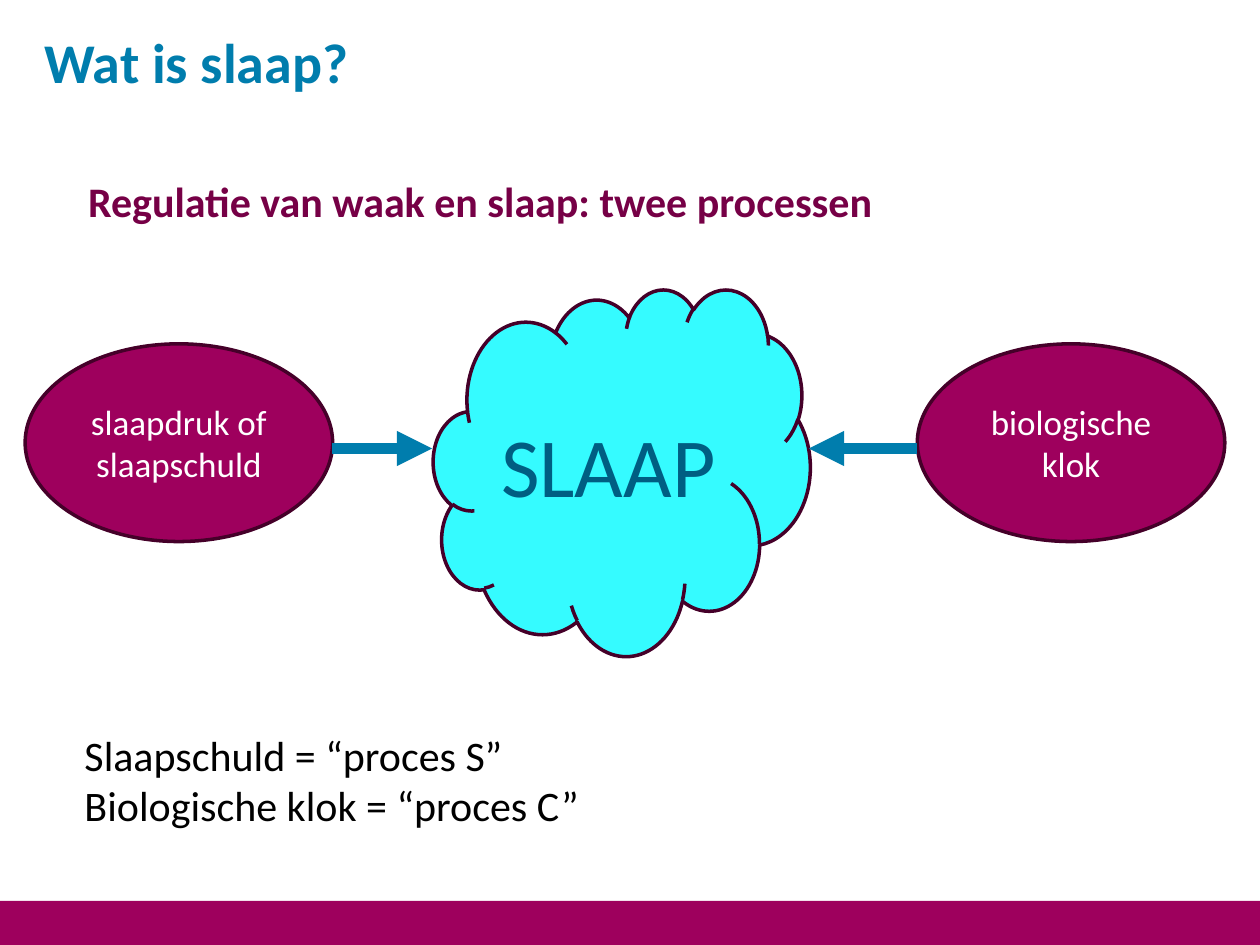
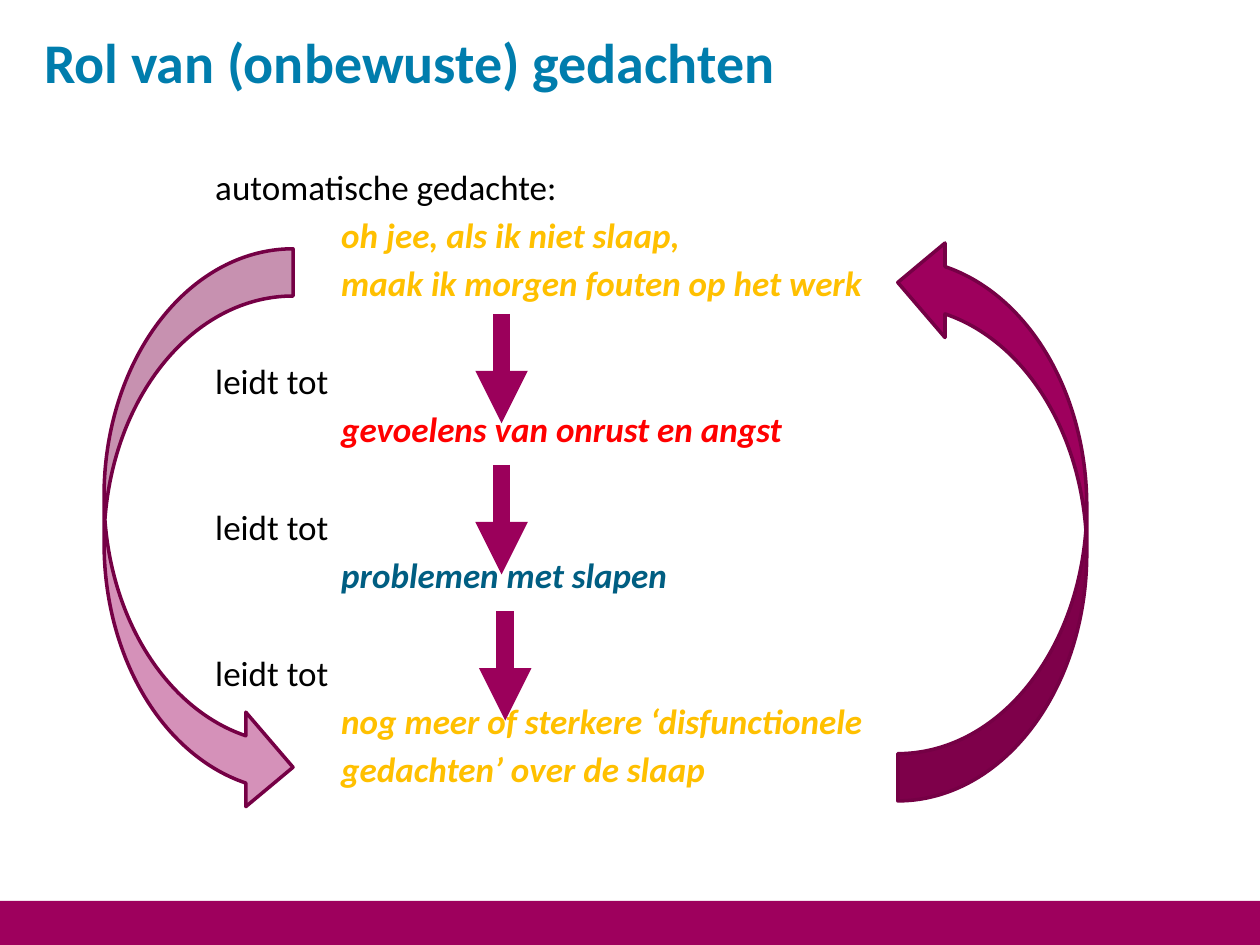
from dataclasses import dataclass

from lxml import etree
from pptx import Presentation
from pptx import util as u
from pptx.dml.color import RGBColor
from pptx.enum import shapes, text
from pptx.oxml.ns import qn

FONT = "Calibri"
BLUE, DARK_BLUE, CYAN = "007DAD", "005E82", "35FBFF"
MAGENTA, ARROW_MAGENTA = "9E005D", "9B005B"
PLUM, DARK_PLUM, EDGE = "760046", "450029", "750045"
BLACK, WHITE, YELLOW, RED = "000000", "FFFFFF", "FFC000", "FF0000"

WIDTH, HEIGHT, BAND = 720, 540, 25.2
LINE_GAP = 3.65    # space between lines of the chain of thoughts
STEP_GAP = 31.7    # the same, with one line left open
TAB = 72

Box = tuple[float, float, float, float]
Point = tuple[float, float]


@dataclass
class Style:
    size: float
    color: str
    bold: bool = False
    italic: bool = False


@dataclass
class Outline:
    color: str
    width: float = 2


@dataclass
class Bubble:
    kind: shapes.MSO_SHAPE
    box: Box
    fill: str
    label: str
    style: Style


@dataclass
class Arrow:
    start: Point
    end: Point
    color: str
    width: float


@dataclass
class Loop:
    box: Box
    rotation: float
    alpha: int = 100


@dataclass
class Thought:
    label: str
    color: str = BLACK
    level: int = 1
    gap: float = LINE_GAP


TITLE = Style(32, BLUE, bold=True)
SUBTITLE = Style(24, PLUM, bold=True)
NOTE = Style(24, BLACK)
PROCESS = Style(20, WHITE)

BUBBLES = [
    Bubble(shapes.MSO_SHAPE.OVAL, (14.4, 196.5, 175.7, 113), MAGENTA,
           "slaapdruk of slaapschuld", PROCESS),
    Bubble(shapes.MSO_SHAPE.OVAL, (524.2, 196.5, 175.7, 113), MAGENTA,
           "biologische klok", PROCESS),
    Bubble(shapes.MSO_SHAPE.CLOUD, (247.7, 165, 215.3, 209.5), CYAN,
           "SLAAP", Style(48, DARK_BLUE)),
]
PROCESS_ARROWS = [
    Arrow((190, 256.3), (247, 256.3), BLUE, 6.75),
    Arrow((524.2, 256.3), (462.2, 256.3), BLUE, 6.75),
]
THOUGHTS = [
    Thought("automatische gedachte:", gap=0),
    Thought("oh jee, als ik niet slaap,", YELLOW, 2),
    Thought("maak ik morgen fouten op het werk", YELLOW, 2),
    Thought("leidt tot", gap=STEP_GAP),
    Thought("gevoelens van onrust en angst", RED, 2),
    Thought("leidt tot", gap=STEP_GAP),
    Thought("problemen met slapen", DARK_BLUE, 2),
    Thought("leidt tot", gap=STEP_GAP),
    Thought("nog meer of sterkere ‘disfunctionele", YELLOW, 2),
    Thought("gedachten’ over de slaap", YELLOW, 2),
]
STEP_LENGTH = 62.6
STEP_ARROWS = [
    Arrow((x, y), (x, y + STEP_LENGTH), ARROW_MAGENTA, 10)
    for x, y in [(286.6, 179.3), (286.6, 265.7), (288.7, 349.2)]
]
LOOPS = [
    Loop((405.4, 242, 323.3, 108), 270),
    Loop((-48.2, 249.8, 323.3, 108), 90, alpha=43),
]


def rgb(color: str) -> RGBColor:
    return RGBColor.from_string(color)


def points(values):
    return [u.Pt(v) for v in values]


def style_paragraph(p, style: Style):
    for r in p.runs:
        f = r.font
        f.name, f.size = FONT, u.Pt(style.size)
        f.bold, f.italic = style.bold, style.italic
        f.color.rgb = rgb(style.color)


def add_text(s, box: Box, lines: list[str], style: Style,
             inset: bool = True, wrap: bool = True):
    tf = s.shapes.add_textbox(*points(box)).text_frame
    tf.word_wrap = wrap
    if not inset:
        tf.margin_left = tf.margin_top = tf.margin_right = tf.margin_bottom = 0
    tf.text = "\n".join(lines)
    for p in tf.paragraphs:
        style_paragraph(p, style)
    return tf


def add_shape(s, kind, box: Box, fill: str, outline: Outline | None = None):
    sp = s.shapes.add_shape(kind, *points(box))
    sp.shadow.inherit = False
    sp.fill.solid()
    sp.fill.fore_color.rgb = rgb(fill)
    if outline:
        sp.line.color.rgb = rgb(outline.color)
        sp.line.width = u.Pt(outline.width)
    else:
        sp.line.fill.background()
    return sp


def add_bubble(s, bubble: Bubble):
    sp = add_shape(s, bubble.kind, bubble.box, bubble.fill, Outline(DARK_PLUM))
    tf = sp.text_frame
    tf.text = bubble.label
    tf.word_wrap = True
    tf.vertical_anchor = text.MSO_ANCHOR.MIDDLE
    p = tf.paragraphs[0]
    p.alignment = text.PP_ALIGN.CENTER
    style_paragraph(p, bubble.style)


def add_arrow(s, arrow: Arrow):
    cx = s.shapes.add_connector(shapes.MSO_CONNECTOR.STRAIGHT,
                                *points(arrow.start + arrow.end))
    cx.line.color.rgb = rgb(arrow.color)
    cx.line.width = u.Pt(arrow.width)
    etree.SubElement(cx.line._get_or_add_ln(), qn("a:tailEnd"), type="triangle")
    etree.SubElement(cx._element.spPr, qn("a:effectLst"))


def add_loop(s, loop: Loop):
    sp = add_shape(s, shapes.MSO_SHAPE.CURVED_UP_ARROW, loop.box, MAGENTA,
                   Outline(EDGE))
    sp.rotation = loop.rotation
    if loop.alpha < 100:
        color = sp._element.spPr.find(qn("a:solidFill"))[0]
        etree.SubElement(color, qn("a:alpha"), val=str(loop.alpha * 1000))


def add_thoughts(s, box: Box, thoughts: list[Thought]):
    tf = add_text(s, box, [t.label for t in thoughts], NOTE, inset=False)
    for p, t in zip(tf.paragraphs, thoughts):
        p._p.get_or_add_pPr().set("marL", str(u.Pt(TAB * t.level)))
        p.space_before = u.Pt(t.gap)
        stressed = t.level == 2
        style_paragraph(p, Style(20, t.color, stressed, stressed))


def add_slide(prs, title: str):
    """Add a slide with the shared band and title."""
    s = prs.slides.add_slide(prs.slide_layouts[6])
    add_shape(s, shapes.MSO_SHAPE.RECTANGLE,
              (0, HEIGHT - BAND, WIDTH, BAND), MAGENTA)
    add_text(s, (25.2, 15.8, 478.8, 77), [title], TITLE, inset=False)
    return s


def build_regulation(prs):
    s = add_slide(prs, "Wat is slaap?")
    for bubble in BUBBLES:
        add_bubble(s, bubble)
    for arrow in PROCESS_ARROWS:
        add_arrow(s, arrow)
    add_text(s, (41.2, 413.3, 298, 65.5),
             ["Slaapschuld = “proces S”", "Biologische klok = “proces C”"],
             NOTE, wrap=False)
    add_text(s, (43.2, 96.5, 617.8, 36),
             ["Regulatie van waak en slaap: twee processen"], SUBTITLE)


def build_thoughts(prs):
    s = add_slide(prs, "Rol van (onbewuste) gedachten")
    add_thoughts(s, (51, 94.3, 669, 372.2), THOUGHTS)
    for arrow in STEP_ARROWS:
        add_arrow(s, arrow)
    for loop in LOOPS:
        add_loop(s, loop)


def main():
    prs = Presentation()
    prs.slide_width, prs.slide_height = points((WIDTH, HEIGHT))
    build_regulation(prs)
    build_thoughts(prs)
    prs.save("out.pptx")


if __name__ == "__main__":
    main()
